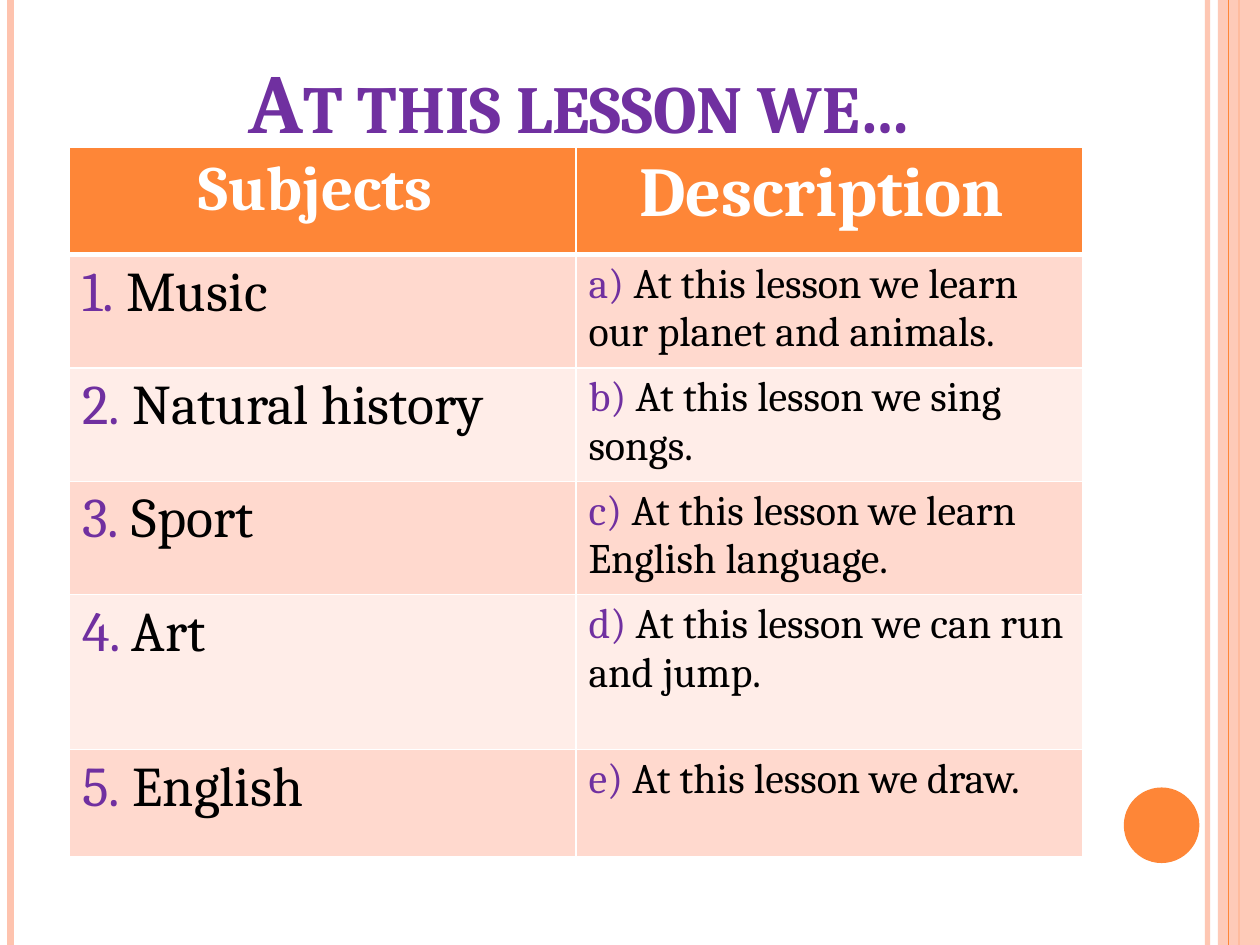
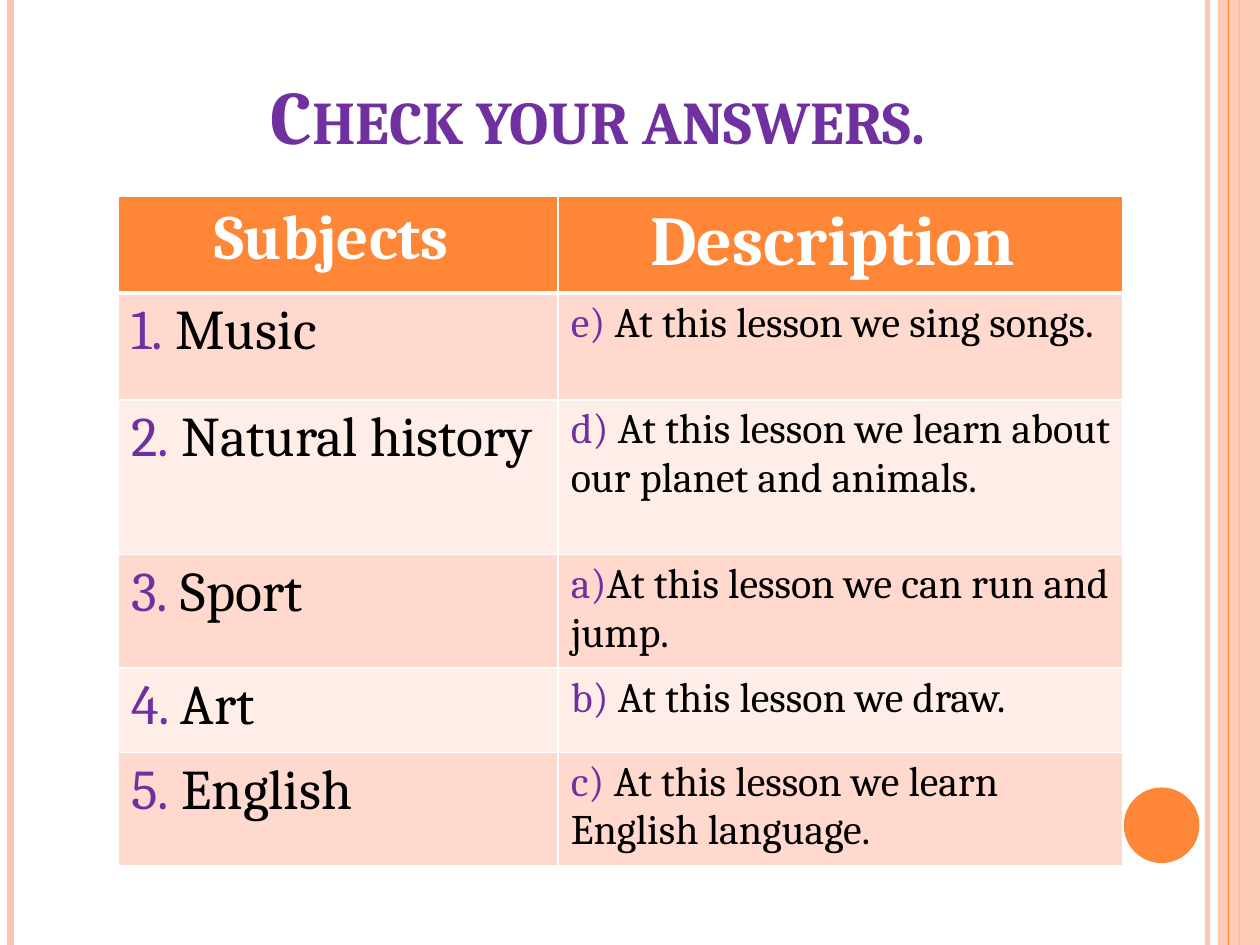
from lxml.etree import SubElement
from pptx import Presentation
from pptx.dml.color import RGBColor
from pptx.enum.shapes import MSO_CONNECTOR as Connector, MSO_SHAPE as Shape
from pptx.enum.text import MSO_ANCHOR as Anchor, PP_ALIGN as Align
from pptx.oxml.ns import qn
from pptx.util import Pt

WIDTH, HEIGHT = 720, 540
HEADERS = [("Subjects ", 36), ("Description ", 40)]
SUBJECTS = [("1.", " Music"), ("2.", " Natural history"), ("3.", " Sport"),
            ("4. ", "Art"), ("5.", " English")]
LESSON_DESCRIPTIONS = [
    ("a)", " At this lesson we learn our planet and animals."),
    ("b)", " At this lesson we sing songs."),
    ("c)", " At this lesson we learn English language."),
    ("d)", " At this lesson we can run and jump."),
    ("e)", " At this lesson we draw."),
]
ANSWERS = [
    ("e)", " At this lesson we sing songs."),
    ("d)", " At this lesson we learn about our planet and animals."),
    ("a)", "At this lesson we can run and jump."),
    ("b)", " At this lesson we draw."),
    ("c)", " At this lesson we learn English language."),
]


def color(value):
    return RGBColor.from_string(value)


def paint(fill, value, opacity=100):
    fill.solid()
    fill.fore_color.rgb = color(value)
    if opacity < 100:
        # The fill format offers no public access to transparency.
        srgb = fill._xPr.find(qn("a:solidFill")).find(qn("a:srgbClr"))
        SubElement(srgb, qn("a:alpha"), val=str(opacity * 1000))


class Deck:
    """Holds the shared style and the slide being built."""

    FONT = "Cambria"
    ORANGE, PEACH, PURPLE = "FE8637", "FEC3AE", "7030A0"
    WHITE, BLACK = "FFFFFF", "000000"
    BANDS = ["FFD9CE", "FFEDE8"]

    def __init__(self):
        self.presentation = Presentation()
        self.presentation.slide_width = Pt(WIDTH)
        self.presentation.slide_height = Pt(HEIGHT)
        self.slide = None

    def add_slide(self):
        self.slide = self.presentation.slides.add_slide(self.presentation.slide_layouts[6])
        paint(self.slide.background.fill, self.WHITE)
        self.add_vertical_line(690, self.PEACH, 3, 93)
        self.add_vertical_line(6, self.PEACH, 4.5)
        self.add_vertical_line(708, self.ORANGE, 1.5)
        self.add_shape(Shape.RECTANGLE, 696, 0, 24, HEIGHT, self.PEACH, 87)
        self.add_vertical_line(702, self.ORANGE, 0.75)
        self.add_shape(Shape.OVAL, 642.2, 450, 43.2, 43.2, self.ORANGE)

    def add_vertical_line(self, x, value, width, opacity=100):
        line = self.slide.shapes.add_connector(Connector.STRAIGHT, Pt(x), 0, Pt(x), Pt(HEIGHT))
        line.line.width = Pt(width)
        paint(line.line.fill, value, opacity)
        SubElement(line._element.spPr, qn("a:effectLst"))

    def add_shape(self, kind, left, top, width, height, value, opacity=100):
        shape = self.slide.shapes.add_shape(kind, Pt(left), Pt(top), Pt(width), Pt(height))
        shape.shadow.inherit = False
        shape.line.fill.background()
        paint(shape.fill, value, opacity)

    def style_paragraph(self, paragraph, size, value=None, bold=False, align=Align.LEFT):
        paragraph.alignment = align
        font = paragraph.font
        font.name, font.size, font.bold = self.FONT, Pt(size), bold
        if value:
            font.color.rgb = color(value)

    def add_title(self, text, left, top, width, height, size):
        box = self.slide.shapes.add_textbox(Pt(left), Pt(top), Pt(width), Pt(height))
        frame = box.text_frame
        frame.word_wrap = True
        frame.vertical_anchor = Anchor.BOTTOM
        paragraph = frame.paragraphs[0]
        run = paragraph.add_run()
        run.text = text
        run.font._element.set("cap", "small")
        self.style_paragraph(paragraph, size, self.PURPLE, True, Align.CENTER)

    def add_borders(self, cell, top, bottom):
        properties = cell._tc.get_or_add_tcPr()
        widths = {"lnL": 1, "lnR": 1, "lnT": top, "lnB": bottom}
        for index, (side, width) in enumerate(widths.items()):
            border = SubElement(properties, qn(f"a:{side}"), w=str(Pt(width)))
            fill = SubElement(border, qn("a:solidFill"))
            SubElement(fill, qn("a:srgbClr"), val=self.WHITE)
            properties.insert(index, border)

    def fill_header(self, cell, text, size):
        paint(cell.fill, self.ORANGE)
        self.add_borders(cell, 1, 3)
        cell.text = text
        self.style_paragraph(cell.text_frame.paragraphs[0], size, self.WHITE, True, Align.CENTER)

    def fill_item(self, cell, row, item, size):
        """Write a purple marker and its black text into a banded cell."""
        paint(cell.fill, self.BANDS[row % 2])
        self.add_borders(cell, 1 if row else 3, 1)
        paragraph = cell.text_frame.paragraphs[0]
        self.style_paragraph(paragraph, size)
        for text, value in zip(item, (self.PURPLE, self.BLACK)):
            run = paragraph.add_run()
            run.text = text
            run.font.color.rgb = color(value)

    def add_lesson_table(self, left, top, widths, heights, descriptions):
        table = self.slide.shapes.add_table(
            len(heights), len(widths), Pt(left), Pt(top),
            Pt(sum(widths)), Pt(sum(heights))).table
        for column, width in zip(table.columns, widths):
            column.width = Pt(width)
        for row, height in zip(table.rows, heights):
            row.height = Pt(height)
        for index, (text, size) in enumerate(HEADERS):
            self.fill_header(table.cell(0, index), text, size)
        for row, (subject, description) in enumerate(zip(SUBJECTS, descriptions)):
            self.fill_item(table.cell(row + 1, 0), row, subject, 32)
            self.fill_item(table.cell(row + 1, 1), row, description, 24)


def main():
    deck = Deck()

    deck.add_slide()
    deck.add_title("At this lesson we…", 50.4, 22.3, 562.3, 67, 48)
    deck.add_lesson_table(39.7, 84.4, [289.4, 289.4],
                          [61, 61, 61, 61, 88.5, 61], LESSON_DESCRIPTIONS)

    deck.add_slide()
    deck.add_title("Check your answers. ", 84.2, 39.6, 522.7, 55.4, 43.2)
    deck.add_lesson_table(67.7, 112.3, [251.3, 322.6],
                          [52, 61, 88.5, 61, 48.2, 63.4], ANSWERS)

    deck.presentation.save("out.pptx")


if __name__ == "__main__":
    main()
